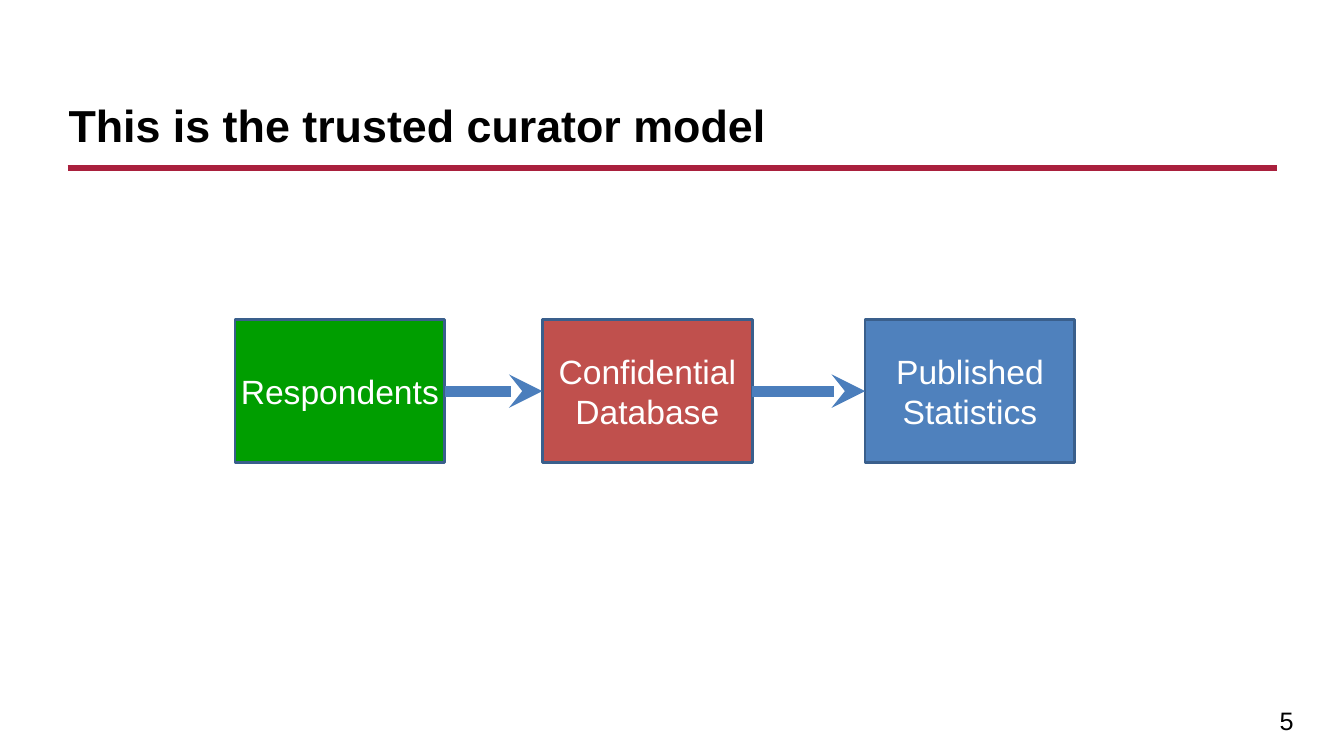
from lxml import etree
from pptx import Presentation
from pptx.dml.color import RGBColor
from pptx.enum.shapes import MSO_CONNECTOR, MSO_SHAPE
from pptx.enum.text import MSO_ANCHOR, PP_ALIGN
from pptx.oxml.ns import qn
from pptx.util import Inches, Pt

RECTANGLE = MSO_SHAPE.RECTANGLE
STRAIGHT = MSO_CONNECTOR.STRAIGHT
BOTTOM, MIDDLE = MSO_ANCHOR.BOTTOM, MSO_ANCHOR.MIDDLE
LEFT, CENTER, RIGHT = PP_ALIGN.LEFT, PP_ALIGN.CENTER, PP_ALIGN.RIGHT
TITLE_ONLY = 5
LEFT_SIDE, RIGHT_SIDE = 1, 3

BLACK = RGBColor(0x00, 0x00, 0x00)
WHITE = RGBColor(0xFF, 0xFF, 0xFF)
CRIMSON = RGBColor(0xA9, 0x20, 0x3D)
GREEN = RGBColor(0x00, 0x9E, 0x00)
RED = RGBColor(0xC0, 0x50, 0x4D)
BLUE = RGBColor(0x4F, 0x81, 0xBD)
OUTLINE = RGBColor(0x3A, 0x5F, 0x8C)
ARROW = RGBColor(0x4B, 0x7E, 0xBC)

BOX_TOP, BOX_WIDTH, BOX_HEIGHT = 3.17, 2.08, 1.42
# Text, left edge, fill, side inset
STAGES = [
    ("Respondents", 2.33, GREEN, 0),
    ("Confidential Database", 5.38, RED, 0.1),
    ("Published Statistics", 8.58, BLUE, 0.1),
]


def write_text(shape, text, size, color, align, anchor, bold=False):
    frame = shape.text_frame
    frame.text = text
    frame.word_wrap = True
    frame.vertical_anchor = anchor
    para = frame.paragraphs[0]
    para.alignment = align
    font = para.runs[0].font
    font.name = "Arial"
    font.size = Pt(size)
    font.bold = bold
    font.color.rgb = color


def add_title(page, text):
    title = page.shapes.title
    title.left, title.top = Inches(0.58), Inches(0.3)
    title.width, title.height = Inches(12.08), Inches(1.25)
    write_text(title, text, 32, BLACK, LEFT, BOTTOM, bold=True)


def add_line(page, start, end, color, width):
    line = page.shapes.add_connector(
        STRAIGHT, *(Inches(value) for value in (*start, *end)))
    line.line.color.rgb = color
    line.line.width = Pt(width)
    etree.SubElement(line._element.spPr, qn("a:effectLst"))
    return line


def add_stage(page, text, left, fill, inset):
    box = page.shapes.add_shape(
        RECTANGLE, Inches(left), Inches(BOX_TOP),
        Inches(BOX_WIDTH), Inches(BOX_HEIGHT))
    box.shadow.inherit = False
    box.fill.solid()
    box.fill.fore_color.rgb = fill
    box.line.color.rgb = OUTLINE
    box.line.width = Pt(2)
    write_text(box, text, 24, WHITE, CENTER, MIDDLE)
    box.text_frame.margin_left = box.text_frame.margin_right = Inches(inset)
    return box


def add_arrow(page, source, target):
    arrow = add_line(page, (0, 0), (0, 0), ARROW, 8)
    arrow.begin_connect(source, RIGHT_SIDE)
    arrow.end_connect(target, LEFT_SIDE)
    outline = arrow.line._get_or_add_ln()
    etree.SubElement(outline, qn("a:tailEnd"), type="stealth")


def add_page_number(page, number):
    box = page.shapes.add_textbox(
        Inches(10.1), Inches(6.95), Inches(2.83), Inches(0.39))
    write_text(box, number, 18, BLACK, RIGHT, MIDDLE)


def main():
    deck = Presentation()
    deck.slide_width, deck.slide_height = Inches(13.33), Inches(7.5)
    page = deck.slides.add_slide(deck.slide_layouts[TITLE_ONLY])

    # Heading with rule
    add_line(page, (0.67, 1.67), (12.67, 1.67), CRIMSON, 4.5)
    add_title(page, "This is the trusted curator model")

    # Flow from respondents to statistics
    boxes = [add_stage(page, *stage) for stage in STAGES]
    for source, target in zip(boxes, boxes[1:]):
        add_arrow(page, source, target)

    add_page_number(page, "5")
    deck.save("out.pptx")


if __name__ == "__main__":
    main()
